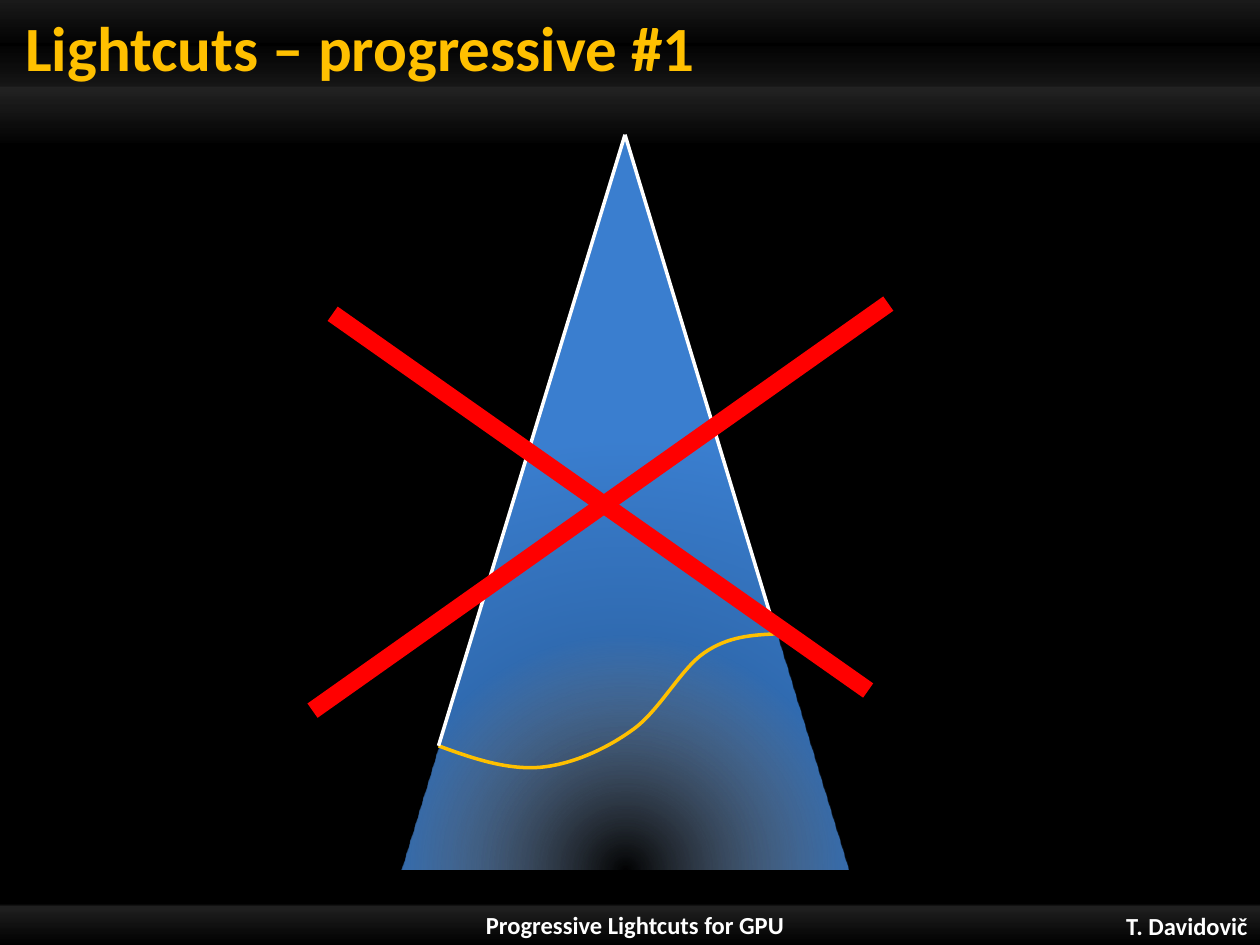
from dataclasses import dataclass

from lxml import etree
from pptx import Presentation
from pptx.dml.color import RGBColor
from pptx.enum.shapes import MSO_CONNECTOR, MSO_SHAPE
from pptx.enum.text import MSO_ANCHOR, PP_ALIGN
from pptx.oxml.ns import qn
from pptx.util import Pt


@dataclass(frozen=True)
class Theme:
    font: str = "Calibri"
    background: str = "000000"
    white: str = "FFFFFF"
    accent: str = "FFC000"
    cross: str = "FF0000"
    tree_glow: str = "C3DDFF"
    tree_middle: str = "306BB1"
    tree_top: str = "3A7ECF"
    title_size: float = 36
    footer_size: float = 14
    thin: float = 2
    thick: float = 10


@dataclass(frozen=True)
class Box:
    left: float
    top: float
    width: float
    height: float

    def lengths(self):
        return Pt(self.left), Pt(self.top), Pt(self.width), Pt(self.height)

    def place(self, point):
        """Turn a point inside the box into slide lengths."""
        x, y = point
        return Pt(self.left + x), Pt(self.top + y)


THEME = Theme()
WIDTH, HEIGHT = 720, 540

# Light-tree cut, relative to the tree: a start, then Bezier segments
CUT_START = (213.8, 285.2)
CUT_SEGMENTS = [
    [(200.2, 285.9), (186.5, 286.6), (172.8, 296)],
    [(159.1, 305.3), (146.9, 329.8), (131, 340.6)],
    [(115.9, 351.4), (96.5, 360), (78.5, 361.5)],
    [(59.7, 362.9), (40.3, 356.4), (20.9, 349.2)],
]
CROSS_STROKES = [
    ((277.9, 96.5), (-51.1, 329.1)),
    ((266.4, 317.6), (-39.6, 102.3)),
]


def color(value):
    return RGBColor.from_string(value)


def add_gradient_shape(slide, box, preset, stops, radial=False):
    """Stops are (position %, colour, opacity %); radial ones start at the bottom middle."""
    shape = slide.shapes.add_shape(preset, *box.lengths())
    shape.shadow.inherit = False
    shape.line.fill.background()
    shape.fill.gradient()
    gradient = shape._element.spPr.find(qn("a:gradFill"))
    for child in list(gradient):
        gradient.remove(child)
    stop_list = etree.SubElement(gradient, qn("a:gsLst"))
    for position, value, opacity in stops:
        stop = etree.SubElement(stop_list, qn("a:gs"), pos=str(position * 1000))
        rgb = etree.SubElement(stop, qn("a:srgbClr"), val=value)
        etree.SubElement(rgb, qn("a:alpha"), val=str(opacity * 1000))
    if radial:
        path = etree.SubElement(gradient, qn("a:path"))
        path.set("path", "circle")
        etree.SubElement(path, qn("a:fillToRect"), l="50000", t="100000", r="50000")
    else:
        etree.SubElement(gradient, qn("a:lin"), ang="5400000", scaled="0")


def add_text(slide, box, text, size, value, alignment, anchor, insets=(7.2, 0, 7.2, 0)):
    frame = slide.shapes.add_textbox(*box.lengths()).text_frame
    frame.word_wrap = True
    frame.vertical_anchor = anchor
    frame.margin_left, frame.margin_top, frame.margin_right, frame.margin_bottom = map(Pt, insets)
    paragraph = frame.paragraphs[0]
    paragraph.alignment = alignment
    run = paragraph.add_run()
    run.text = text
    run.font.name = THEME.font
    run.font.size = Pt(size)
    run.font.bold = True
    run.font.color.rgb = color(value)


def add_line(slide, box, start, end, value, width):
    line = slide.shapes.add_connector(MSO_CONNECTOR.STRAIGHT, *box.place(start), *box.place(end))
    line.line.color.rgb = color(value)
    line.line.width = Pt(width)
    etree.SubElement(line._element.spPr, qn("a:effectLst"))


def add_curve(slide, box, start, segments, value, width):
    """Build a freeform through the anchors, then bend each side into its Bezier segment."""
    anchors = [box.place(segment[-1]) for segment in segments]
    builder = slide.shapes.build_freeform(*box.place(start))
    builder.add_line_segments(anchors, close=False)
    curve = builder.convert_to_shape()
    curve.shadow.inherit = False
    curve.fill.background()
    curve.line.color.rgb = color(value)
    curve.line.width = Pt(width)
    sides = list(curve._element.iter(qn("a:lnTo")))
    for side, segment in zip(sides, segments):
        bend = etree.Element(qn("a:cubicBezTo"))
        for x, y in map(box.place, segment):
            etree.SubElement(bend, qn("a:pt"), x=str(x - curve.left), y=str(y - curve.top))
        side.getparent().replace(side, bend)


def add_header(slide, box):
    white = THEME.white
    add_gradient_shape(slide, box, MSO_SHAPE.RECTANGLE, [
        (0, white, 10), (31, white, 0), (60, white, 8), (61, white, 13), (100, white, 0)])
    add_text(slide, Box(box.left, box.top, 592.5, 48.2), "Lightcuts – progressive #1",
             THEME.title_size, THEME.accent, PP_ALIGN.LEFT, MSO_ANCHOR.BOTTOM,
             insets=(14.4, 0, 7.2, 0))


def add_footer(slide, box):
    white = THEME.white
    add_gradient_shape(slide, box, MSO_SHAPE.RECTANGLE, [
        (5, white, 0), (10, white, 8), (11, white, 13), (100, white, 0)])
    labels = [
        (Box(box.left + 586.8, box.top + 2.2, 133.2, 22.3), "T. Davidovič", PP_ALIGN.RIGHT),
        (Box(box.left + 100.8, box.top + 0.9, 524.2, 24.2), "Progressive Lightcuts for GPU",
         PP_ALIGN.CENTER),
    ]
    for label_box, text, alignment in labels:
        add_text(slide, label_box, text, THEME.footer_size, white, alignment, MSO_ANCHOR.MIDDLE)


def add_light_tree(slide, box):
    add_gradient_shape(slide, box, MSO_SHAPE.ISOSCELES_TRIANGLE, [
        (0, THEME.tree_glow, 0), (55, THEME.tree_middle, 100), (100, THEME.tree_top, 100)],
        radial=True)
    add_curve(slide, box, CUT_START, CUT_SEGMENTS, THEME.accent, THEME.thin)
    apex = (box.width / 2, 0)
    for cut_end in (CUT_START, CUT_SEGMENTS[-1][-1]):
        add_line(slide, box, apex, cut_end, THEME.white, THEME.thin)
    for start, end in CROSS_STROKES:
        add_line(slide, box, start, end, THEME.cross, THEME.thick)


def main():
    presentation = Presentation()
    presentation.slide_width, presentation.slide_height = Pt(WIDTH), Pt(HEIGHT)
    slide = presentation.slides.add_slide(presentation.slide_layouts[6])
    slide.background.fill.solid()
    slide.background.fill.fore_color.rgb = color(THEME.background)
    add_footer(slide, Box(0, 515.5, WIDTH, 24.5))
    add_header(slide, Box(0, 0, WIDTH, 82))
    add_light_tree(slide, Box(229.7, 77, 254.9, 419.8))
    presentation.save("out.pptx")


if __name__ == "__main__":
    main()
